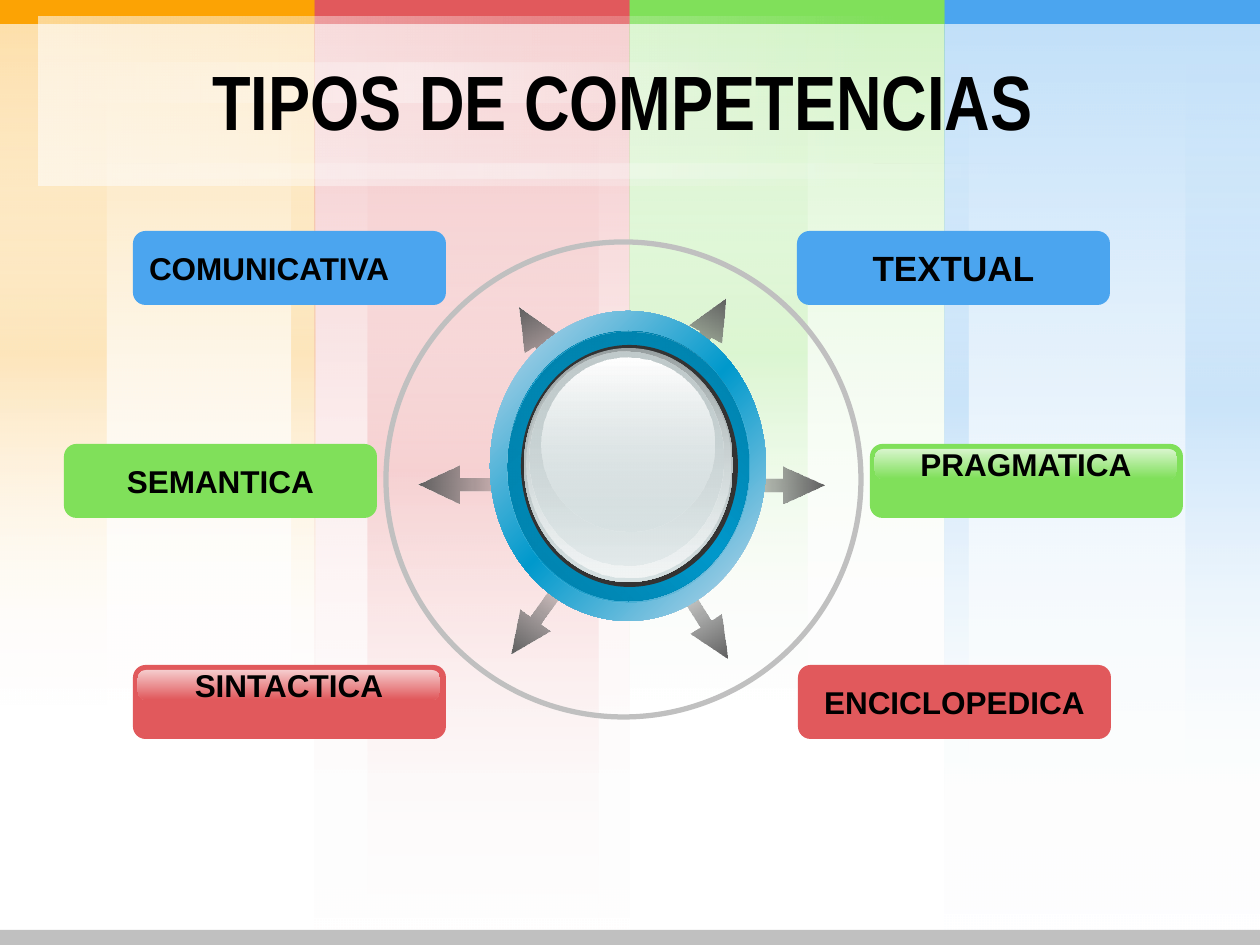
from lxml import etree
from pptx import Presentation
from pptx.dml.color import RGBColor
from pptx.enum.shapes import MSO_SHAPE
from pptx.enum.text import MSO_ANCHOR, PP_ALIGN
from pptx.oxml.ns import qn
from pptx.util import Emu, Pt

RECT, ROUND = MSO_SHAPE.RECTANGLE, MSO_SHAPE.ROUNDED_RECTANGLE
OVAL, ARROW = MSO_SHAPE.OVAL, MSO_SHAPE.RIGHT_ARROW
LEFT, CENTER = PP_ALIGN.LEFT, PP_ALIGN.CENTER
MIDDLE = MSO_ANCHOR.MIDDLE

ORANGE = RGBColor(0xFC, 0xA3, 0x04)
RED = RGBColor(0xE1, 0x59, 0x5C)
GREEN = RGBColor(0x80, 0xE0, 0x5A)
BLUE = RGBColor(0x4B, 0xA5, 0xEF)
WHITE = RGBColor(0xFF, 0xFF, 0xFF)
BLACK = RGBColor(0x00, 0x00, 0x00)
SILVER = RGBColor(0xC0, 0xC0, 0xC0)
CHARCOAL = RGBColor(0x33, 0x33, 0x33)
ARROW_TAIL = RGBColor(0x5A, 0x5A, 0x5A)
ARROW_TIP = RGBColor(0x5F, 0x5F, 0x5F)
RIM_PALE = RGBColor(0xC9, 0xDB, 0xEB)
RIM_BLUE = RGBColor(0x00, 0x99, 0xCC)
RIM_DEEP = RGBColor(0x00, 0x75, 0x9C)
RIM_MID = RGBColor(0x00, 0x7E, 0xA7)
GLASS_DARK = RGBColor(0x99, 0xA1, 0xA2)
GLASS_MID = RGBColor(0xC1, 0xCB, 0xCC)
GLASS = RGBColor(0xD6, 0xE1, 0xE2)
GLASS_PALE = RGBColor(0xF2, 0xF5, 0xF5)

PX = 914400 / 126
W, H = 1260, 945


def px(n):
    """Turn pixels into EMU."""
    return Emu(round(n * PX))


def paint(s, stops, angle):
    """Fill a shape with a gradient of (position, colour, opacity) stops, angle clockwise."""
    s.fill.gradient()
    s.fill.gradient_angle = (360 - angle) % 360
    stop_list = s._element.spPr.find(qn("a:gradFill")).find(qn("a:gsLst"))
    for old in list(stop_list):
        stop_list.remove(old)
    for pos, color, opacity in stops:
        gs = etree.SubElement(stop_list, qn("a:gs"), pos=str(pos * 1000))
        clr = etree.SubElement(gs, qn("a:srgbClr"), val=str(color))
        if opacity < 100:
            etree.SubElement(clr, qn("a:alpha"), val=str(opacity * 1000))


def add_shape(slide, kind, box, fill=None, angle=90, adj=(), rotation=0):
    """Add a lineless shape with a solid colour, a list of gradient stops or no fill."""
    s = slide.shapes.add_shape(kind, *map(px, box))
    s.shadow.inherit = False
    s.line.fill.background()
    s.rotation = rotation
    for i, value in enumerate(adj):
        s.adjustments[i] = value
    if fill is None:
        s.fill.background()
    elif isinstance(fill, list):
        paint(s, fill, angle)
    else:
        s.fill.solid()
        s.fill.fore_color.rgb = fill
    return s


def add_text(s, text, size, name="Arial", align=CENTER, wrap=False):
    """Write one bold black line, centred vertically, in a shape."""
    tf = s.text_frame
    tf.word_wrap = wrap
    tf.vertical_anchor = MIDDLE
    p = tf.paragraphs[0]
    p.alignment = align
    r = p.add_run()
    r.text = text
    for key, value in {"size": Pt(size), "name": name, "bold": True}.items():
        setattr(r.font, key, value)
    r.font.color.rgb = BLACK


def add_column(slide, box, color, bands):
    """Draw a fading column with lighter bands and a solid cap."""
    x, y, w, h = box
    wash = [(0, color, 20), (100, WHITE, 0)]
    glow = [(0, WHITE, 0), (50, color, 20), (100, WHITE, 0)]
    add_shape(slide, RECT, box, wash)
    for dx, band_w, band_h in bands:
        add_shape(slide, RECT, (x + dx, y, band_w, band_h), glow)
    add_shape(slide, RECT, box, wash)
    add_shape(slide, RECT, (x, y, w, 24), color)


def add_background(slide, box):
    """Draw the four columns and the bottom bar."""
    x, y, w, h = box
    columns = [
        (ORANGE, 708, [(292, 23, 708), (0, 106, 708)]),
        (RED, 945, [(53, 231, 945)]),
        (GREEN, 708, [(0, 178, 708)]),
        (BLUE, 941, [(0, 24, 803), (241, 74, 803)]),
    ]
    col_w = w // len(columns)
    for i, (color, col_h, bands) in enumerate(columns):
        add_column(slide, (x + i * col_w, y, col_w, col_h), color, bands)
    add_shape(slide, RECT, (x, y + h - 15, w, 15), SILVER)


def add_title(slide, box, text):
    """Draw the translucent title panel, its shine strips and the title."""
    x, y, w, h = box
    fade = [(0, WHITE, 35), (100, WHITE, 0)]
    shine = [(0, WHITE, 0), (50, WHITE, 35), (100, WHITE, 0)]
    strips = [(147, 973, 15, shine), (0, w, h, fade), (46, 741, 40, shine), (0, w, h, fade)]
    for dy, strip_w, strip_h, stops in strips:
        add_shape(slide, RECT, (x, y + dy, strip_w, strip_h), stops, 0)
    s = slide.shapes.add_textbox(*map(px, (x + 24, y + 18, 1120, 130)))
    add_text(s, text, 44, "Arial Narrow", wrap=True)


def add_label(slide, box, text, color, size=18, align=CENTER, glossy=False):
    """Draw a rounded label, with its text on a glossy strip if asked."""
    x, y, w, h = box
    s = add_shape(slide, ROUND, box, color, adj=[0.17])
    if glossy:
        stops = [(0, WHITE, 70), (100, color, 70)]
        s = add_shape(slide, ROUND, (x + 5, y + 5, w - 11, 30), stops, adj=[0.28])
    add_text(s, text, size, align=align)


def add_arrows(slide, box):
    """Draw the six arrows pointing outwards."""
    x, y, w, h = box
    stops = [(0, ARROW_TAIL, 0), (100, ARROW_TIP, 100)]
    arrows = [
        (264, 82, 101, 299.6), (264, 355, 101, 57.8), (109, 91, 101, 239.5),
        (104, 352, 101, 125.6), (337, 225, 101, 0), (32, 224, 110, 180),
    ]
    for dx, dy, length, turn in arrows:
        add_shape(slide, ARROW, (x + dx, y + dy, length, 37), stops, 0, [0.35, 1.11], turn)


def add_dial(slide, box):
    """Draw the glass dial as nested ellipses."""
    x, y, w, h = box
    layers = [
        (0, 0, w, h, [(0, RIM_PALE, 100), (50, RIM_BLUE, 100), (100, RIM_PALE, 100)], 45),
        (18, 20, 241, 270, [(0, RIM_DEEP, 100), (50, RIM_BLUE, 100), (100, RIM_DEEP, 100)], 315),
        (18, 21, 241, 270, [(0, RIM_MID, 100), (100, RIM_BLUE, 0)], 45),
        (31, 34, 217, 242, CHARCOAL, 0),
        (34, 37, 209, 234, [(0, GLASS_DARK, 100), (100, GLASS, 100)], 90),
        (37, 38, 204, 229, [(0, GLASS, 0), (100, GLASS_PALE, 100)], 90),
        (39, 41, 194, 214, [(0, GLASS_MID, 100), (100, GLASS, 48)], 90),
        (51, 47, 173, 174, [(0, WHITE, 100), (100, GLASS, 38)], 90),
    ]
    for dx, dy, layer_w, layer_h, fill, angle in layers:
        add_shape(slide, OVAL, (x + dx, y + dy, layer_w, layer_h), fill, angle)


def add_wheel(slide, box):
    """Draw the arrows, the outer ring and the dial."""
    x, y, w, h = box
    add_arrows(slide, box)
    ring = add_shape(slide, OVAL, box)
    ring.line.color.rgb = SILVER
    ring.line.width = Pt(3)
    add_dial(slide, (x + 104, y + 69, 276, 310))


def main():
    """Build and save the slide."""
    prs = Presentation()
    prs.slide_width, prs.slide_height = px(W), px(H)
    slide = prs.slides.add_slide(prs.slide_layouts[6])
    add_background(slide, (0, 0, W, H))
    add_title(slide, (39, 17, 868, 169), "TIPOS DE COMPETENCIAS")
    labels = [
        (797, 231, "TEXTUAL", BLUE, {"size": 20}),
        (870, 444, "PRAGMATICA", GREEN, {"glossy": True}),
        (798, 665, "ENCICLOPEDICA", RED, {}),
        (133, 665, "SINTACTICA", RED, {"glossy": True}),
        (64, 444, "SEMANTICA", GREEN, {}),
        (133, 231, "COMUNICATIVA", BLUE, {"align": LEFT}),
    ]
    for x, y, text, color, style in labels:
        add_label(slide, (x, y, 313, 74), text, color, **style)
    add_wheel(slide, (386, 242, 475, 475))
    prs.save("out.pptx")


if __name__ == "__main__":
    main()
